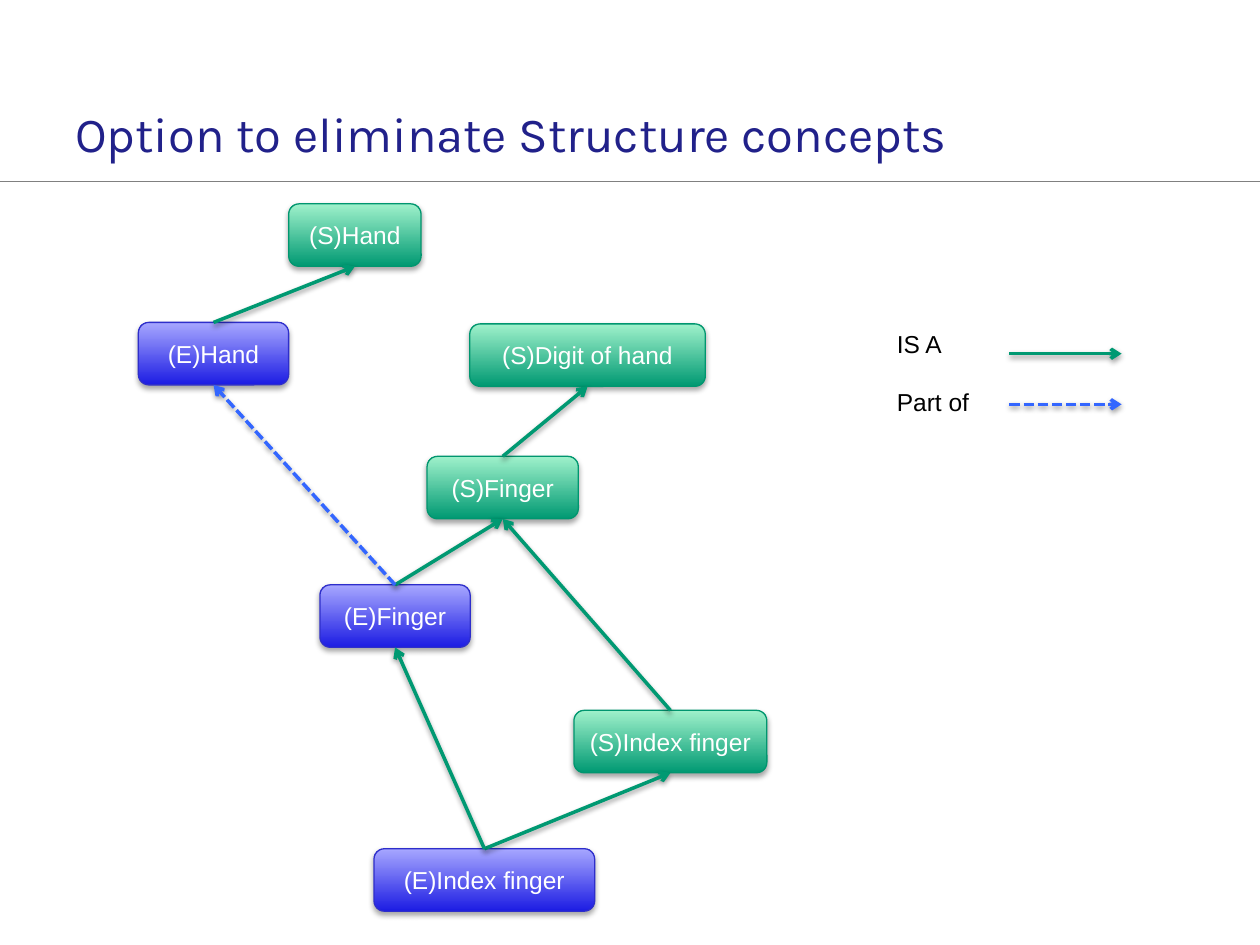
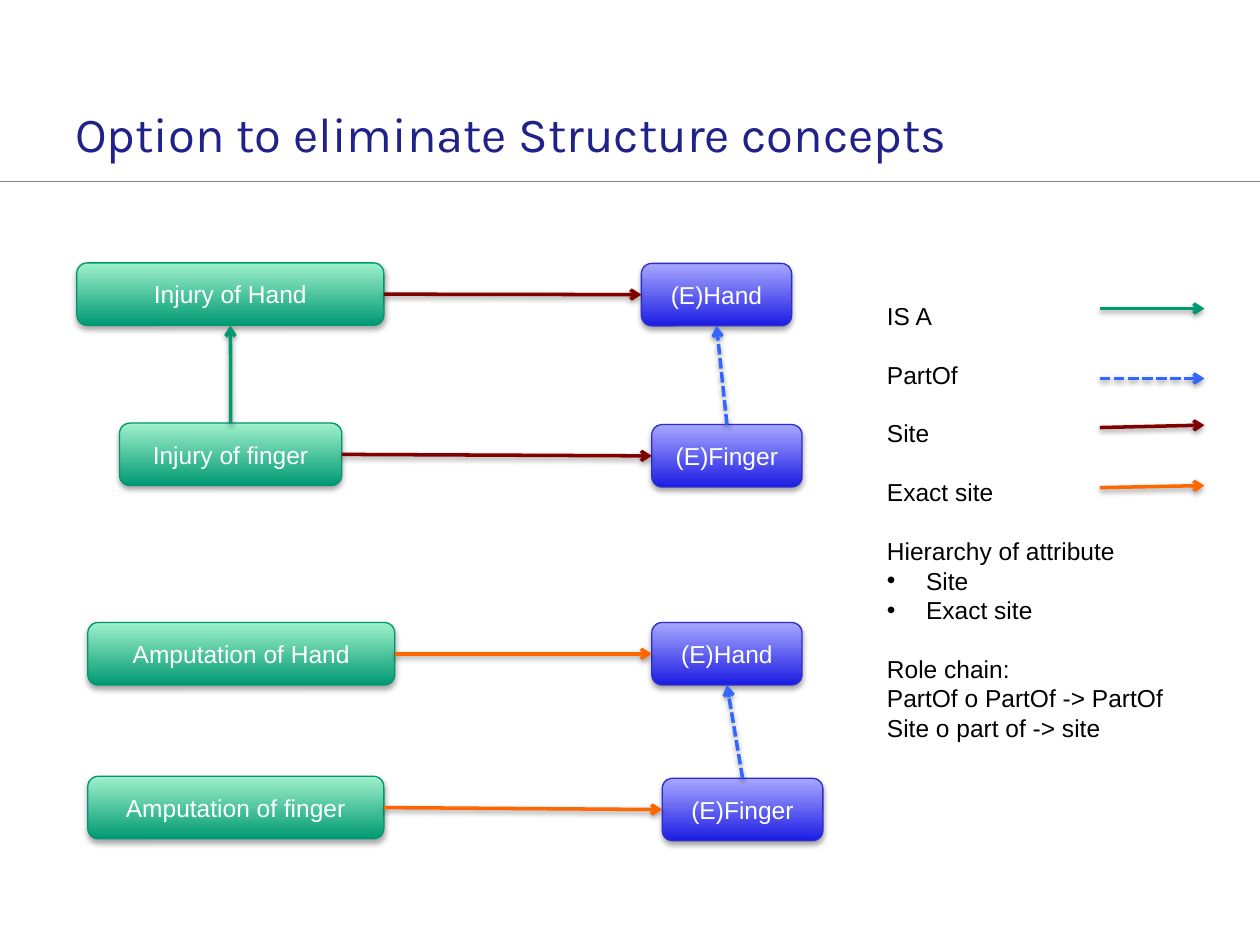
from lxml import etree
from pptx import Presentation
from pptx.dml.color import RGBColor
from pptx.enum.dml import MSO_LINE
from pptx.enum.shapes import MSO_CONNECTOR, MSO_SHAPE
from pptx.enum.text import MSO_ANCHOR, PP_ALIGN
from pptx.oxml.ns import qn
from pptx.util import Cm, Pt

STRAIGHT = MSO_CONNECTOR.STRAIGHT
ROUNDED = MSO_SHAPE.ROUNDED_RECTANGLE
DASHED = MSO_LINE.SQUARE_DOT
MIDDLE = MSO_ANCHOR.MIDDLE
CENTER = PP_ALIGN.CENTER
TOP, LEFT, BOTTOM, RIGHT = range(4)  # connection sites of a box

COLORS = {
    "title": "21218A", "rule": "808080", "text": "000000", "white": "FFFFFF",
    "is_a": "009972", "part_of": "3366FF", "site": "800000", "exact_site": "FF6600",
}
# Box kinds: bottom colour, top colour, outline
BOXES = {
    "entire": ("1C1CE3", "A7A7FF", "2E2ECB"),
    "structure": ("009972", "9FF1CB", "00966F"),
}
TITLE = "Option to eliminate Structure concepts"
LINE_HEIGHT = Pt(16.8)


def rgb(name):
    return RGBColor.from_string(COLORS.get(name, name))


class Deck:
    def __init__(self):
        self.prs = Presentation()
        self.prs.slide_width, self.prs.slide_height = Cm(25.4), Cm(19.05)
        self.s = None

    def slide(self, title):
        self.s = self.prs.slides.add_slide(self.prs.slide_layouts[6])
        rule = self.line((0, 3.66), (25.4, 3.66), "rule", 0.75)
        etree.SubElement(rule._element.spPr, qn("a:effectLst"))
        tf = self.frame(1.27, 1.98, 18.31, 1.42)
        tf.vertical_anchor = MIDDLE
        tf.margin_top = tf.margin_bottom = Cm(0.25)
        self.run(tf.paragraphs[0], title, 28, "Karla", "title")

    def frame(self, x, y, w, h):
        tf = self.s.shapes.add_textbox(Cm(x), Cm(y), Cm(w), Cm(h)).text_frame
        tf.word_wrap = True
        return tf

    def run(self, p, text, size=14, font="Arial", color="text"):
        r = p.add_run()
        r.text = text
        r.font.size, r.font.name = Pt(size), font
        r.font.color.rgb = rgb(color)

    def shadow(self, shape, distance, opacity):
        effects = etree.SubElement(shape._element.spPr, qn("a:effectLst"))
        outer = etree.SubElement(effects, qn("a:outerShdw"), blurRad="40000",
                                 dist=str(Pt(distance)), dir="5400000", rotWithShape="0")
        black = etree.SubElement(outer, qn("a:srgbClr"), val="000000")
        etree.SubElement(black, qn("a:alpha"), val=str(opacity * 1000))

    def box(self, text, kind, x, y, w):
        sp = self.s.shapes.add_shape(ROUNDED, Cm(x), Cm(y), Cm(w), Cm(1.26))
        bottom, top, outline = BOXES[kind]
        sp.fill.gradient()
        sp.fill.gradient_angle = 90
        for stop, color in zip(sp.fill.gradient_stops, (bottom, top)):
            stop.color.rgb = rgb(color)
        sp.line.color.rgb = rgb(outline)
        sp.line.width = Pt(0.75)
        self.shadow(sp, 1.8, 35)
        sp.text_frame.vertical_anchor = MIDDLE
        p = sp.text_frame.paragraphs[0]
        p.alignment = CENTER
        self.run(p, text, color="white")
        return sp

    def line(self, start, end, color, width):
        points = [Cm(v) for v in (*start, *end)]
        c = self.s.shapes.add_connector(STRAIGHT, *points)
        c.line.color.rgb = rgb(color)
        c.line.width = Pt(width)
        return c

    def arrow(self, relation, start=(0, 0), end=(0, 0)):
        c = self.line(start, end, relation, 2)
        if relation == "part_of":
            c.line.dash_style = DASHED
        ln = c._element.spPr.find(qn("a:ln"))
        etree.SubElement(ln, qn("a:tailEnd"), type="arrow")
        self.shadow(c, 1.6, 38)
        return c

    def link(self, relation, source, target, sites=(TOP, BOTTOM)):
        """Arrow glued to two boxes."""
        c = self.arrow(relation)
        c.begin_connect(source, sites[0])
        c.end_connect(target, sites[1])

    def text_column(self, x, y, w, h, groups):
        """Groups of lines one line apart; a leading bullet makes a list item."""
        tf = self.frame(x, y, w, h)
        for g, group in enumerate(groups):
            for i, text in enumerate(group):
                first = g == i == 0
                p = tf.paragraphs[0] if first else tf.add_paragraph()
                if text.startswith("•"):
                    pPr = p._p.get_or_add_pPr()
                    pPr.set("marL", str(Cm(0.79)))
                    pPr.set("indent", str(-Cm(0.79)))
                    etree.SubElement(pPr, qn("a:buFont"), typeface="Arial")
                    etree.SubElement(pPr, qn("a:buChar"), char="•")
                p.line_spacing = LINE_HEIGHT
                if i == 0 and not first:
                    p.space_before = LINE_HEIGHT
                self.run(p, text.lstrip("•"))


def hierarchy_slide(d):
    d.slide(TITLE)
    e_hand = d.box("(E)Hand", "entire", 2.79, 6.5, 3.03)
    e_finger = d.box("(E)Finger", "entire", 6.45, 11.79, 3.03)
    e_index = d.box("(E)Index finger", "entire", 7.54, 17.11, 4.45)
    s_hand = d.box("(S)Hand", "structure", 5.82, 4.11, 2.67)
    s_digit = d.box("(S)Digit of hand", "structure", 9.47, 6.53, 4.75)
    s_finger = d.box("(S)Finger", "structure", 8.61, 9.2, 3.05)
    s_index = d.box("(S)Index finger", "structure", 11.57, 14.32, 3.89)

    for child, parent in ((e_hand, s_hand), (e_finger, s_finger), (e_index, s_index),
                          (s_index, s_finger), (e_index, e_finger), (s_finger, s_digit)):
        d.link("is_a", child, parent)
    d.link("part_of", e_finger, e_hand)

    d.text_column(17.83, 6.5, 6.22, 2.06, [["IS A"], ["Part of"]])
    for relation, y in (("is_a", 7.13), ("part_of", 8.15)):
        d.arrow(relation, (20.35, y), (22.61, y))


def attributes_slide(d):
    d.slide(TITLE)
    injury_hand = d.box("Injury of Hand", "structure", 1.55, 5.3, 6.19)
    injury_finger = d.box("Injury of finger", "structure", 2.41, 8.53, 4.48)
    amputation_hand = d.box("Amputation of Hand", "structure", 1.77, 12.55, 6.19)
    amputation_finger = d.box("Amputation of finger", "structure", 1.77, 15.65, 5.97)
    upper_hand = d.box("(E)Hand", "entire", 12.93, 5.31, 3.03)
    upper_finger = d.box("(E)Finger", "entire", 13.14, 8.56, 3.03)
    lower_hand = d.box("(E)Hand", "entire", 13.14, 12.55, 3.03)
    lower_finger = d.box("(E)Finger", "entire", 13.35, 15.69, 3.24)

    d.link("is_a", injury_finger, injury_hand)
    d.link("part_of", upper_finger, upper_hand)
    d.link("part_of", lower_finger, lower_hand)
    for relation, finding, body_part in (
            ("site", injury_hand, upper_hand), ("site", injury_finger, upper_finger),
            ("exact_site", amputation_hand, lower_hand),
            ("exact_site", amputation_finger, lower_finger)):
        d.link(relation, finding, body_part, (RIGHT, LEFT))

    d.text_column(17.63, 5.94, 6.27, 9.25, [
        ["IS A"], ["PartOf"], ["Site"], ["Exact site"],
        ["Hierarchy of attribute", "•Site", "•Exact site"],
        ["Role chain:", "PartOf o PartOf -> PartOf", "Site o part of -> site"],
    ])
    for relation, y1, y2 in (("is_a", 6.22, 6.22), ("part_of", 7.63, 7.63),
                             ("site", 8.62, 8.57), ("exact_site", 9.83, 9.79)):
        d.arrow(relation, (22.17, y1), (24.28, y2))


def main():
    d = Deck()
    hierarchy_slide(d)
    attributes_slide(d)
    d.prs.save("out.pptx")


if __name__ == "__main__":
    main()
